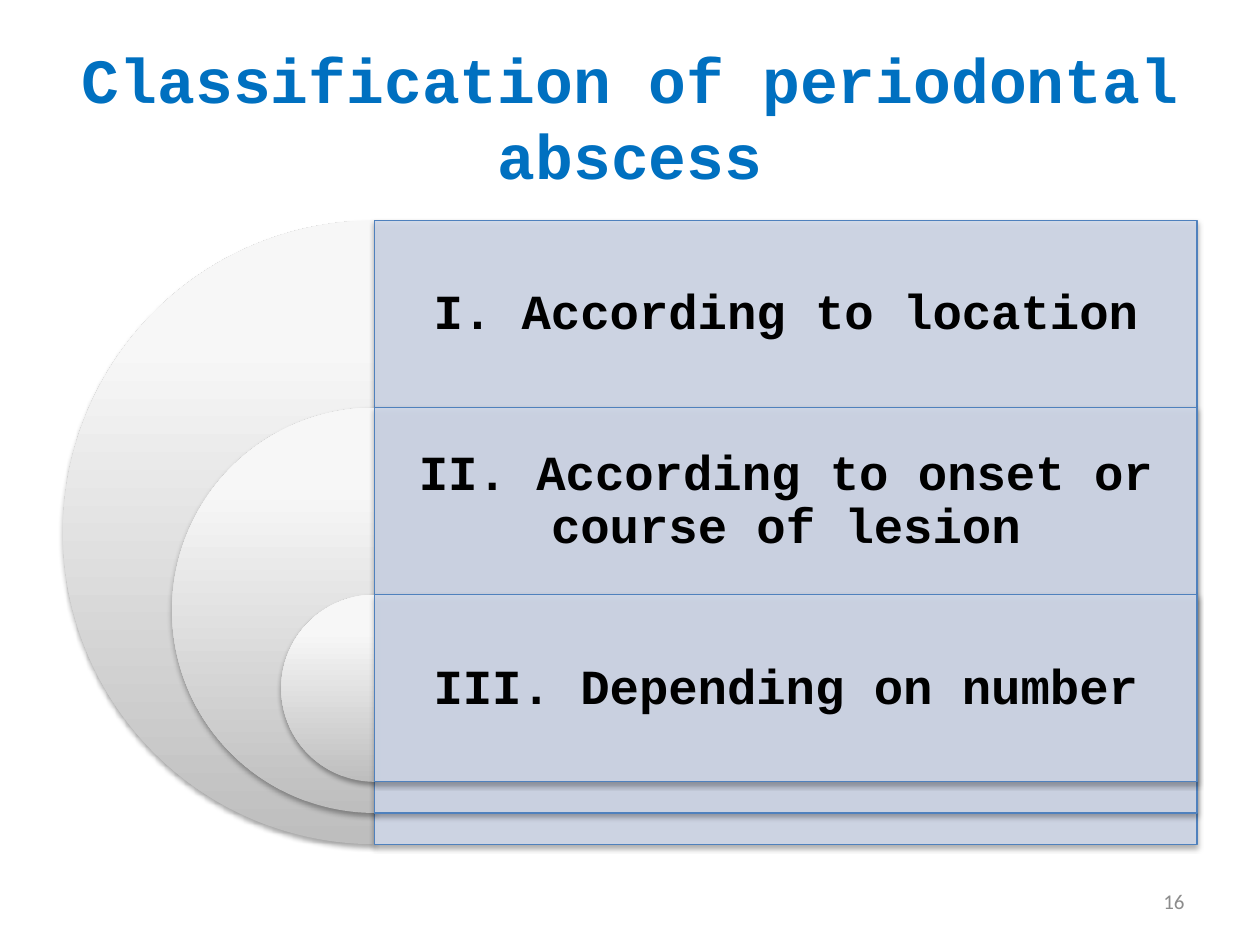
"""Build the periodontal abscess classification slide with nested half discs and bands."""

import copy
from dataclasses import dataclass

import lxml.etree
import pptx
import pptx.dml.color
import pptx.enum.dml
import pptx.enum.shapes
import pptx.enum.text
import pptx.oxml
import pptx.oxml.ns
import pptx.util

RGBColor = pptx.dml.color.RGBColor
Align = pptx.enum.text.PP_ALIGN
Preset = pptx.enum.shapes.MSO_SHAPE

BLUE = RGBColor(0x00, 0x70, 0xC0)
BLACK = RGBColor(0x00, 0x00, 0x00)
GREY = RGBColor(0x8C, 0x8C, 0x8C)
BAND_FILL = RGBColor(0xD0, 0xD8, 0xE8)
BAND_LINE = RGBColor(0x4F, 0x81, 0xBD)
DISC_STOPS = (
    (0.0, RGBColor(0xBE, 0xBE, 0xBE)),
    (0.8, RGBColor(0xF7, 0xF7, 0xF7)),
    (1.0, RGBColor(0xF8, 0xF8, 0xF8)),
)

COLUMNS, ROWS = 200, 150
CELL = pptx.util.Inches(10) // COLUMNS
DISC_LEFT, DISC_TOP, DISC_SIZE, BAND_RIGHT = 10, 35, 99, 190
STEP_SHARE, SHRINK_SHARE = 0.3, 0.35
LABELS = (
    "I. According to location",
    "II. According to onset or course of lesion",
    "III. Depending on number",
)


@dataclass(frozen=True)
class Area:
    """A rectangle measured in grid columns and rows."""

    column: float
    row: float
    width: float
    height: float

    def lengths(self) -> tuple[int, ...]:
        """Return left, top, width and height as slide lengths."""
        return tuple(round(n * CELL) for n in (self.column, self.row, self.width, self.height))


@dataclass(frozen=True)
class Style:
    """The look of one text box."""

    font: str
    size: float
    color: RGBColor
    bold: bool = True
    align: Align = Align.CENTER
    margin: float | None = None
    line_spacing: float | None = None
    space_after: float = 0


TITLE = Style("Courier New", 36, BLUE)
LABEL = Style("Courier New", 28, BLACK, margin=0.12, line_spacing=0.9, space_after=9.8)
NUMBER = Style("Calibri", 12, GREY, bold=False, align=Align.RIGHT)


def add_text(shapes, area: Area, text: str, style: Style) -> None:
    """Add a wrapped, vertically centred text box."""
    box = shapes.add_textbox(*area.lengths())
    frame = box.text_frame
    frame.word_wrap = True
    frame.vertical_anchor = pptx.enum.text.MSO_ANCHOR.MIDDLE
    if style.margin is not None:
        margin = pptx.util.Inches(style.margin)
        frame.margin_left = frame.margin_right = margin
        frame.margin_top = frame.margin_bottom = margin
    para = frame.paragraphs[0]
    para.alignment = style.align
    para.line_spacing = style.line_spacing
    para.space_after = pptx.util.Pt(style.space_after)
    span = para.add_run()
    span.text = text
    span.font.name = style.font
    span.font.size = pptx.util.Pt(style.size)
    span.font.bold = style.bold
    span.font.color.rgb = style.color


def add_shadow(shape) -> None:
    """Give a shape a soft shadow falling straight down."""
    shape.shadow.inherit = False
    effects = shape._element.spPr.find(pptx.oxml.ns.qn("a:effectLst"))
    effects.append(pptx.oxml.parse_xml(
        f'<a:outerShdw {pptx.oxml.ns.nsdecls("a")} blurRad="{pptx.util.Pt(3.1)}" '
        f'dist="{pptx.util.Pt(1.8)}" dir="5400000" rotWithShape="0">'
        '<a:srgbClr val="000000"><a:alpha val="35000"/></a:srgbClr></a:outerShdw>'
    ))


def add_half_disc(shapes, area: Area) -> None:
    """Add the left half of a disc, shaded from dark below to light above."""
    disc = shapes.add_shape(Preset.PIE, *area.lengths())
    disc.adjustments[0], disc.adjustments[1] = 54, 162
    disc.line.fill.background()
    disc.fill.gradient()
    disc.fill.gradient_angle = 90
    stop_list = disc._element.spPr.find(".//" + pptx.oxml.ns.qn("a:gsLst"))
    stop_list.append(copy.deepcopy(stop_list[-1]))
    for stop, (position, color) in zip(disc.fill.gradient_stops, DISC_STOPS):
        stop.position = position
        stop.color.rgb = color
    add_shadow(disc)


def add_band(shapes, area: Area) -> None:
    """Add a slightly transparent outlined band."""
    band = shapes.add_shape(Preset.RECTANGLE, *area.lengths())
    band.fill.solid()
    band.fill.fore_color.rgb = BAND_FILL
    color = band._element.spPr.find(".//" + pptx.oxml.ns.qn("a:srgbClr"))
    lxml.etree.SubElement(color, pptx.oxml.ns.qn("a:alpha"), val="90000")
    band.line.color.rgb = BAND_LINE
    band.line.width = pptx.util.Pt(0.75)
    add_shadow(band)


def add_level(shapes, index: int, label: str) -> None:
    """Add one nested level: half disc, band and label."""
    center = DISC_LEFT + DISC_SIZE / 2
    step = DISC_SIZE * STEP_SHARE
    size = DISC_SIZE * (1 - SHRINK_SHARE * index)
    top = DISC_TOP + step * index
    width = BAND_RIGHT - center
    add_half_disc(shapes, Area(center - size / 2, top, size, size))
    add_band(shapes, Area(center, top, width, size))
    add_text(shapes, Area(center, top, width, step), label, LABEL)


def main() -> None:
    """Build and save the deck."""
    deck = pptx.Presentation()
    deck.slide_width, deck.slide_height = COLUMNS * CELL, ROWS * CELL
    page = deck.slides.add_slide(deck.slide_layouts[6])
    add_text(page.shapes, Area(10, 6, 180, 25), "Classification of periodontal abscess", TITLE)
    diagram = page.shapes.add_group_shape()
    for index, label in enumerate(LABELS):
        add_level(diagram.shapes, index, label)
    add_text(page.shapes, Area(143.4, 139, 46.6, 8), "16", NUMBER)
    deck.save("out.pptx")


if __name__ == "__main__":
    main()
